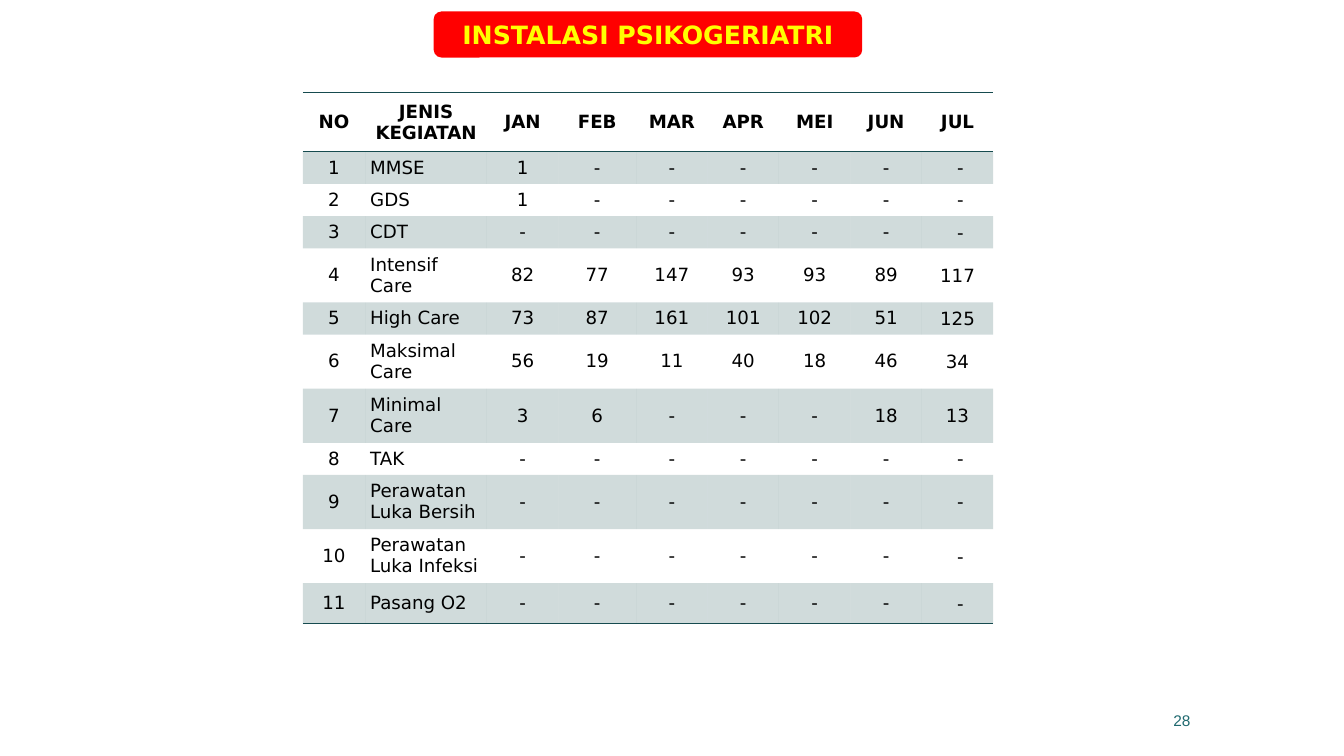
from dataclasses import dataclass

from lxml import etree
from pptx import Presentation
from pptx.dml.color import RGBColor
from pptx.enum.shapes import MSO_SHAPE as Preset
from pptx.enum.text import MSO_ANCHOR as Anchor, PP_ALIGN as Align
from pptx.oxml.ns import qn
from pptx.slide import Slide
from pptx.table import Table, _Cell as Cell
from pptx.text.text import TextFrame
from pptx.util import Cm, Pt

TEAL = RGBColor(0x16, 0x4B, 0x4F)
PAGE_TEAL = RGBColor(0x1F, 0x69, 0x6F)
RED = RGBColor(0xFF, 0x00, 0x00)
YELLOW = RGBColor(0xFF, 0xFF, 0x00)
BLACK = RGBColor(0x00, 0x00, 0x00)

PLAIN_STYLE = "{2D5ABB26-0587-4C30-8999-92F81FD0307C}"
BAND_ALPHA = 20000
HEADER_HEIGHT, ONE_LINE, TWO_LINES, LAST_ROW = 1.48, 0.81, 1.32, 1.02
COLUMN_WIDTHS = (1.57, 3.07, 1.8, 1.96, 1.8, 1.8, 1.8, 1.8, 1.8)
HEADINGS = ("NO", "JENIS KEGIATAN", "JAN", "FEB", "MAR", "APR", "MEI", "JUN", "JUL")


@dataclass(frozen=True)
class TextStyle:
    font: str
    size: float
    color: RGBColor
    bold: bool = False


@dataclass(frozen=True)
class Activity:
    name: str
    counts: tuple[str, ...] = ("-",) * 6 + (" -",)
    height: float = ONE_LINE


TITLE_STYLE = TextStyle("DejaVu Sans", 18, YELLOW, True)
HEADING_STYLE = TextStyle("DejaVu Sans", 13, BLACK, True)
BODY_STYLE = TextStyle("DejaVu Sans", 13, BLACK)
PAGE_STYLE = TextStyle("Arial", 11, PAGE_TEAL)

FIRST_MONTH_ONLY = ("1",) + ("-",) * 5 + (" -",)
ACTIVITIES = (
    Activity("MMSE", FIRST_MONTH_ONLY),
    Activity("GDS", FIRST_MONTH_ONLY),
    Activity("CDT"),
    Activity("Intensif Care", ("82", "77", "147", "93", "93", "89", "117"), TWO_LINES),
    Activity("High Care", ("73", "87", "161", "101", "102", "51", "125")),
    Activity("Maksimal Care", ("56", "19", "11", "40", "18", "46", "34"), TWO_LINES),
    Activity("Minimal Care", ("3", "6", "-", "-", "-", "18", "13"), TWO_LINES),
    Activity("TAK"),
    Activity("Perawatan Luka Bersih", height=TWO_LINES),
    Activity("Perawatan Luka Infeksi", height=TWO_LINES),
    Activity("Pasang O2", height=LAST_ROW),
)


def write(frame: TextFrame, text: str, style: TextStyle, align: Align) -> None:
    para = frame.paragraphs[0]
    para.alignment = align
    span = para.add_run()
    span.text = text
    span.font.name = style.font
    span.font.size = Pt(style.size)
    span.font.bold = style.bold
    span.font.color.rgb = style.color


def add_border(cell: Cell, side: str) -> None:
    line = etree.SubElement(cell._tc.get_or_add_tcPr(), qn(f"a:{side}"), w=str(Pt(1)))
    fill = etree.SubElement(line, qn("a:solidFill"))
    etree.SubElement(fill, qn("a:srgbClr"), val=str(TEAL))


def shade(cell: Cell) -> None:
    cell.fill.solid()
    cell.fill.fore_color.rgb = TEAL
    color = cell._tc.tcPr.find(qn("a:solidFill")).find(qn("a:srgbClr"))
    etree.SubElement(color, qn("a:alpha"), val=str(BAND_ALPHA))


def set_margins(cell: Cell, tight: bool) -> None:
    side = Cm(0.03 if tight else 0.13)
    cell.margin_left = cell.margin_right = cell.margin_top = side
    cell.margin_bottom = Cm(0) if tight else side


def fill_row(table: Table, row: int, texts: tuple[str, ...], height: float) -> None:
    table.rows[row].height = Cm(height)
    is_header = row == 0
    style = HEADING_STYLE if is_header else BODY_STYLE
    for column, text in enumerate(texts):
        cell = table.cell(row, column)
        cell.vertical_anchor = Anchor.MIDDLE
        set_margins(cell, tight=not is_header and column == len(texts) - 1)
        if is_header:
            add_border(cell, "lnT")
        if is_header or row == len(ACTIVITIES):
            add_border(cell, "lnB")
        if row % 2:
            shade(cell)
        else:
            cell.fill.background()
        align = Align.LEFT if column == 1 and not is_header else Align.CENTER
        write(cell.text_frame, text, style, align)


def add_activity_table(page: Slide) -> None:
    height = HEADER_HEIGHT + sum(activity.height for activity in ACTIVITIES)
    frame = page.shapes.add_table(
        len(ACTIVITIES) + 1, len(HEADINGS),
        Cm(7.63), Cm(2.34), Cm(sum(COLUMN_WIDTHS)), Cm(height),
    )
    table = frame.table
    table.horz_banding = False
    table._tbl.tblPr.find(qn("a:tableStyleId")).text = PLAIN_STYLE
    for column, width in zip(table.columns, COLUMN_WIDTHS):
        column.width = Cm(width)
    fill_row(table, 0, HEADINGS, HEADER_HEIGHT)
    for number, activity in enumerate(ACTIVITIES, start=1):
        texts = (str(number), activity.name, *activity.counts)
        fill_row(table, number, texts, activity.height)


def add_title(page: Slide) -> None:
    box = page.shapes.add_shape(
        Preset.ROUNDED_RECTANGLE, Cm(10.93), Cm(0.29), Cm(10.8), Cm(1.16)
    )
    box.shadow.inherit = False
    box.fill.solid()
    box.fill.fore_color.rgb = RED
    box.line.fill.background()
    box.text_frame.vertical_anchor = Anchor.MIDDLE
    write(box.text_frame, "INSTALASI PSIKOGERIATRI", TITLE_STYLE, Align.CENTER)


def add_page_number(page: Slide) -> None:
    box = page.shapes.add_textbox(Cm(22.35), Cm(17.65), Cm(7.9), Cm(1.02))
    box.text_frame.word_wrap = True
    box.text_frame.vertical_anchor = Anchor.MIDDLE
    write(box.text_frame, "28", PAGE_STYLE, Align.RIGHT)


def main() -> None:
    deck = Presentation()
    deck.slide_width, deck.slide_height = Cm(33.87), Cm(19.05)
    page = deck.slides.add_slide(deck.slide_layouts[6])
    add_page_number(page)
    add_activity_table(page)
    add_title(page)
    deck.save("out.pptx")


if __name__ == "__main__":
    main()
